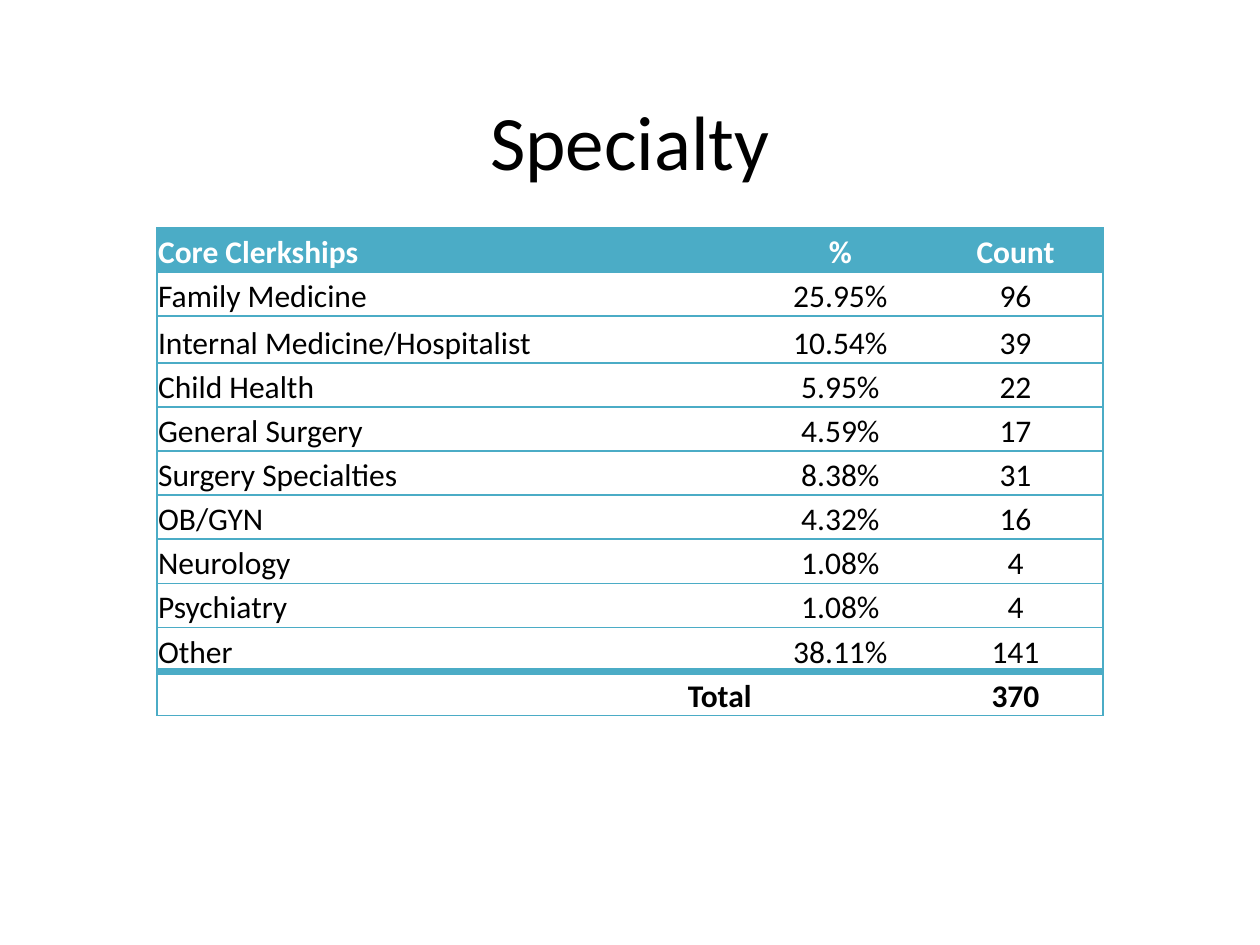
from lxml.etree import SubElement
from pptx import Presentation
from pptx.dml.color import RGBColor
from pptx.enum.text import MSO_VERTICAL_ANCHOR as Anchor, PP_ALIGN as Align
from pptx.oxml.ns import qn
from pptx.util import Inches, Pt

TEAL, WHITE, BLACK = "4BACC6", "FFFFFF", "000000"
ROW = 0.35
COLUMNS = [4.73, 1.39, 1.39]
ROWS = [
    ("Core Clerkships", "%", "Count"),
    ("Family Medicine", "25.95%", "96"),
    ("Internal Medicine/Hospitalist", "10.54%", "39"),
    ("Child Health", "5.95%", "22"),
    ("General Surgery", "4.59%", "17"),
    ("Surgery Specialties", "8.38%", "31"),
    ("OB/GYN", "4.32%", "16"),
    ("Neurology", "1.08%", "4"),
    ("Psychiatry", "1.08%", "4"),
    ("Other", "38.11%", "141"),
    ("Total", "", "370"),
]
LAST = len(ROWS) - 1
CELL_FORMAT = {
    "vertical_anchor": Anchor.BOTTOM,
    "margin_left": Inches(0.01),
    "margin_right": Inches(0.01),
    "margin_top": Inches(0.01),
    "margin_bottom": 0,
}


def write(paragraph, text, size, color, bold, align):
    paragraph.alignment = align
    run = paragraph.add_run()
    run.text = text
    for name, value in {"name": "Calibri", "size": Pt(size), "bold": bold}.items():
        setattr(run.font, name, value)
    run.font.color.rgb = RGBColor.from_string(color)


def add_borders(cell, widths):
    properties = cell._tc.get_or_add_tcPr()
    for position, (side, width) in enumerate(widths.items()):
        line = SubElement(properties, qn(f"a:ln{side}"), w=str(Pt(width)))
        fill = SubElement(line, qn("a:solidFill"))
        SubElement(fill, qn("a:srgbClr"), val=TEAL)
        properties.insert(position, line)


presentation = Presentation()
presentation.slide_width = Inches(10)
presentation.slide_height = Inches(7.5)
slide = presentation.slides.add_slide(presentation.slide_layouts[6])
width, height = presentation.slide_width, presentation.slide_height

title = slide.shapes.add_textbox(
    int(width * 0.075), int(height * 0.04), int(width * 0.85), Inches(1.61)
)
title.text_frame.word_wrap = True
title.text_frame.vertical_anchor = Anchor.MIDDLE
write(title.text_frame.paragraphs[0], "Specialty", 44, BLACK, False, Align.CENTER)

table_width = Inches(sum(COLUMNS))
frame = slide.shapes.add_table(
    len(ROWS), len(COLUMNS), (width - table_width) // 2, Inches(1.81),
    table_width, Inches(ROW * len(ROWS)),
)
table = frame.table
table.first_row = table.horz_banding = False
table._tbl.tblPr.find(qn("a:tableStyleId")).text = "{2D5ABB26-0587-4C30-8999-92F81FD0307C}"
for column, column_width in zip(table.columns, COLUMNS):
    column.width = Inches(column_width)

for r, texts in enumerate(ROWS):
    table.rows[r].height = Inches(0.37 if r == 2 else ROW)
    for c, text in enumerate(texts):
        cell = table.cell(r, c)
        for name, value in CELL_FORMAT.items():
            setattr(cell, name, value)
        cell.fill.solid()
        cell.fill.fore_color.rgb = RGBColor.from_string(TEAL if r == 0 else WHITE)
        if text:
            align = Align.CENTER if c else Align.RIGHT if r == LAST else Align.LEFT
            write(cell.text_frame.paragraphs[0], text, 18,
                  WHITE if r == 0 else BLACK, r in (0, LAST), align)
        borders = {"L": 1} if c == 0 else {"R": 1} if c == 2 else {}
        borders["T"] = 4 if r == LAST else 1
        borders["B"] = 4 if r == LAST - 1 else 1
        add_borders(cell, borders)

presentation.save("out.pptx")
